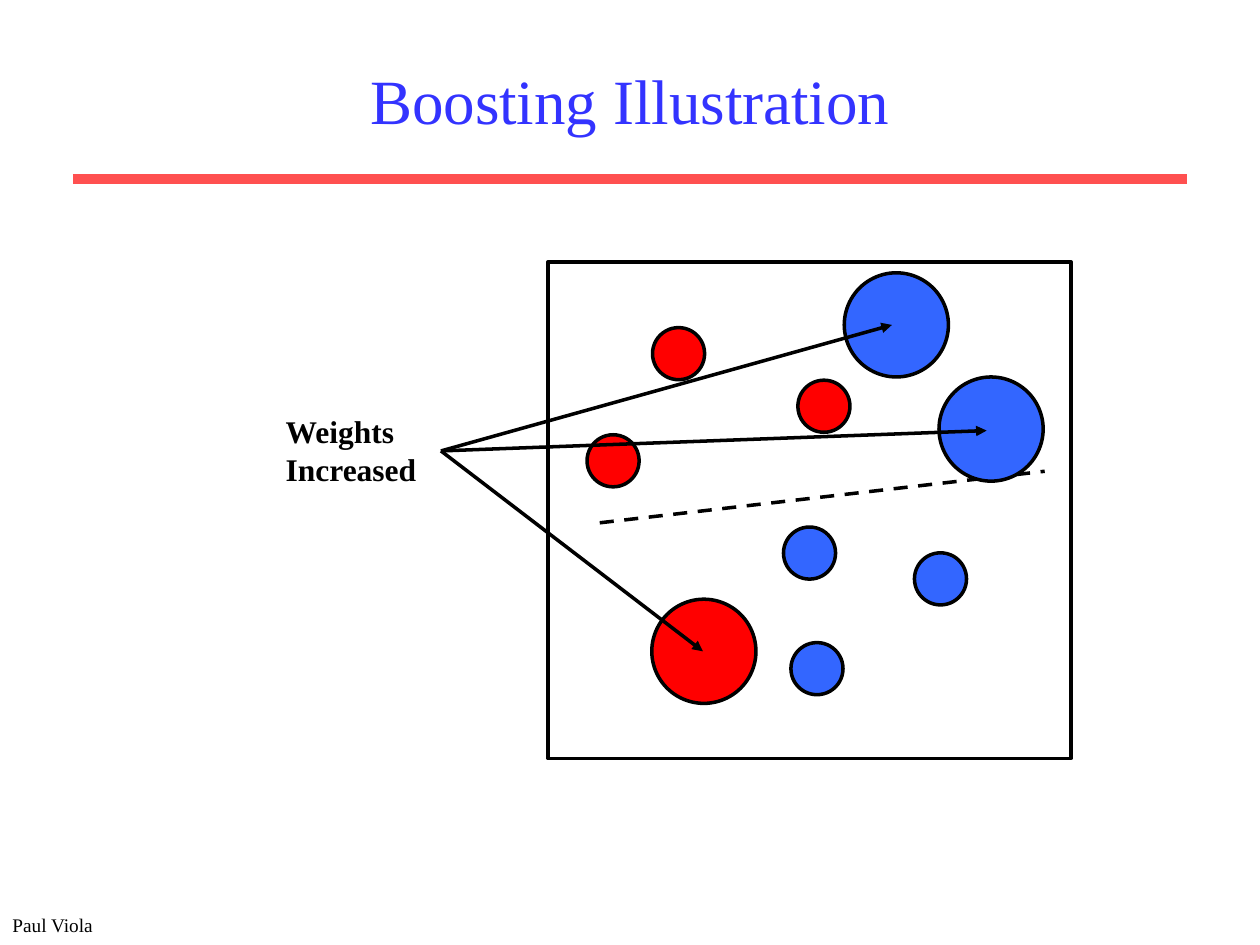
from lxml import etree
from pptx import Presentation, util as u
from pptx.dml.color import RGBColor
from pptx.enum import dml, shapes, text
from pptx.oxml.ns import qn

BLACK, RED, BLUE = "000000", "FF0000", "3366FF"
SMALL, LARGE = 1.05, 2.1  # circle diameters in cm

# Circle centres, in cm from the frame's top left corner
CIRCLES = [
    (2.63, 1.85, SMALL, RED),
    (5.56, 2.91, SMALL, RED),
    (1.31, 4.01, SMALL, RED),
    (3.14, 7.85, LARGE, RED),
    (7.91, 6.39, SMALL, BLUE),
    (5.27, 5.87, SMALL, BLUE),
    (5.42, 8.2, SMALL, BLUE),
    (7.02, 1.27, LARGE, BLUE),
    (8.93, 3.37, LARGE, BLUE),
]
ARROW_START = (-2.16, 3.81)
ARROW_ENDS = [(6.93, 1.27), (3.12, 7.85), (8.84, 3.4)]
BOUNDARY = [(1.04, 5.26), (10.01, 4.22)]


def color(hex_value):
    return RGBColor.from_string(hex_value)


def add_text(slide, box, lines, size, font_color=BLACK, bold=False,
             align=text.PP_ALIGN.LEFT, **frame_format):
    text_frame = slide.shapes.add_textbox(*map(u.Cm, box)).text_frame
    for name, value in ({"word_wrap": True} | frame_format).items():
        setattr(text_frame, name, value)
    font_format = {"name": "Times New Roman", "size": u.Pt(size), "bold": bold}
    for index, line in enumerate(lines):
        paragraph = text_frame.add_paragraph() if index else text_frame.paragraphs[0]
        paragraph.alignment = align
        run = paragraph.add_run()
        run.text = line
        for name, value in font_format.items():
            setattr(run.font, name, value)
        run.font.color.rgb = color(font_color)


def add_outlined(slide, kind, box, fill=None):
    shape = slide.shapes.add_shape(kind, *map(u.Cm, box))
    shape.shadow.inherit = False
    if fill:
        shape.fill.solid()
        shape.fill.fore_color.rgb = color(fill)
    else:
        shape.fill.background()
    shape.line.color.rgb = color(BLACK)
    shape.line.width = u.Pt(2)


def add_line(slide, start, end, line_color=BLACK, width=2, dashed=False, arrow=False):
    connector = slide.shapes.add_connector(
        shapes.MSO_CONNECTOR.STRAIGHT, *map(u.Cm, (*start, *end)))
    line = connector.line
    line.color.rgb = color(line_color)
    line.width = u.Pt(width)
    if dashed:
        line.dash_style = dml.MSO_LINE.DASH
    if arrow:
        etree.SubElement(line._get_or_add_ln(), qn("a:tailEnd"), type="triangle")
    etree.SubElement(connector._element.spPr, qn("a:effectLst"))


def add_header(slide, left, top, width, height):
    # Rule below the title, reaching past both of its sides
    rule_y = top + height + 0.23
    add_line(slide, (left - 0.43, rule_y), (left + width + 0.43, rule_y), "FF5050", 6)
    add_text(slide, (left, top, width, height), ["Boosting Illustration"], 36, "3333FF",
             align=text.PP_ALIGN.CENTER, vertical_anchor=text.MSO_ANCHOR.MIDDLE)


def add_illustration(slide, left, top, width, height):
    def place(point):
        return left + point[0], top + point[1]

    # Frame and decision boundary
    add_outlined(slide, shapes.MSO_SHAPE.RECTANGLE, (left, top, width, height))
    add_line(slide, *map(place, BOUNDARY), dashed=True)

    # Weighted samples
    for x, y, diameter, fill in CIRCLES:
        corner = place((x - diameter / 2, y - diameter / 2))
        add_outlined(slide, shapes.MSO_SHAPE.OVAL, (*corner, diameter, diameter), fill)

    # Label with arrows to the samples that gained weight
    add_text(slide, (*place((-5.54, 2.9)), 3.15, 1.78), ["Weights", "Increased"], 18,
             bold=True, word_wrap=False, auto_size=text.MSO_AUTO_SIZE.SHAPE_TO_FIT_TEXT)
    for end in ARROW_ENDS:
        add_line(slide, place(ARROW_START), place(end), arrow=True)


def add_footer(slide, left, top, width, height):
    add_text(slide, (left, top, width, height), ["Paul Viola"], 11,
             auto_size=text.MSO_AUTO_SIZE.SHAPE_TO_FIT_TEXT)


def main():
    presentation = Presentation()
    presentation.slide_width, presentation.slide_height = u.Cm(25.4), u.Cm(19.05)
    slide = presentation.slides.add_slide(presentation.slide_layouts[6])
    add_header(slide, 1.9, 0.64, 21.6, 2.74)
    add_illustration(slide, 11.05, 5.28, 10.54, 10.01)
    add_footer(slide, 0, 18.29, 8.84, 0.74)
    presentation.save("out.pptx")


if __name__ == "__main__":
    main()
